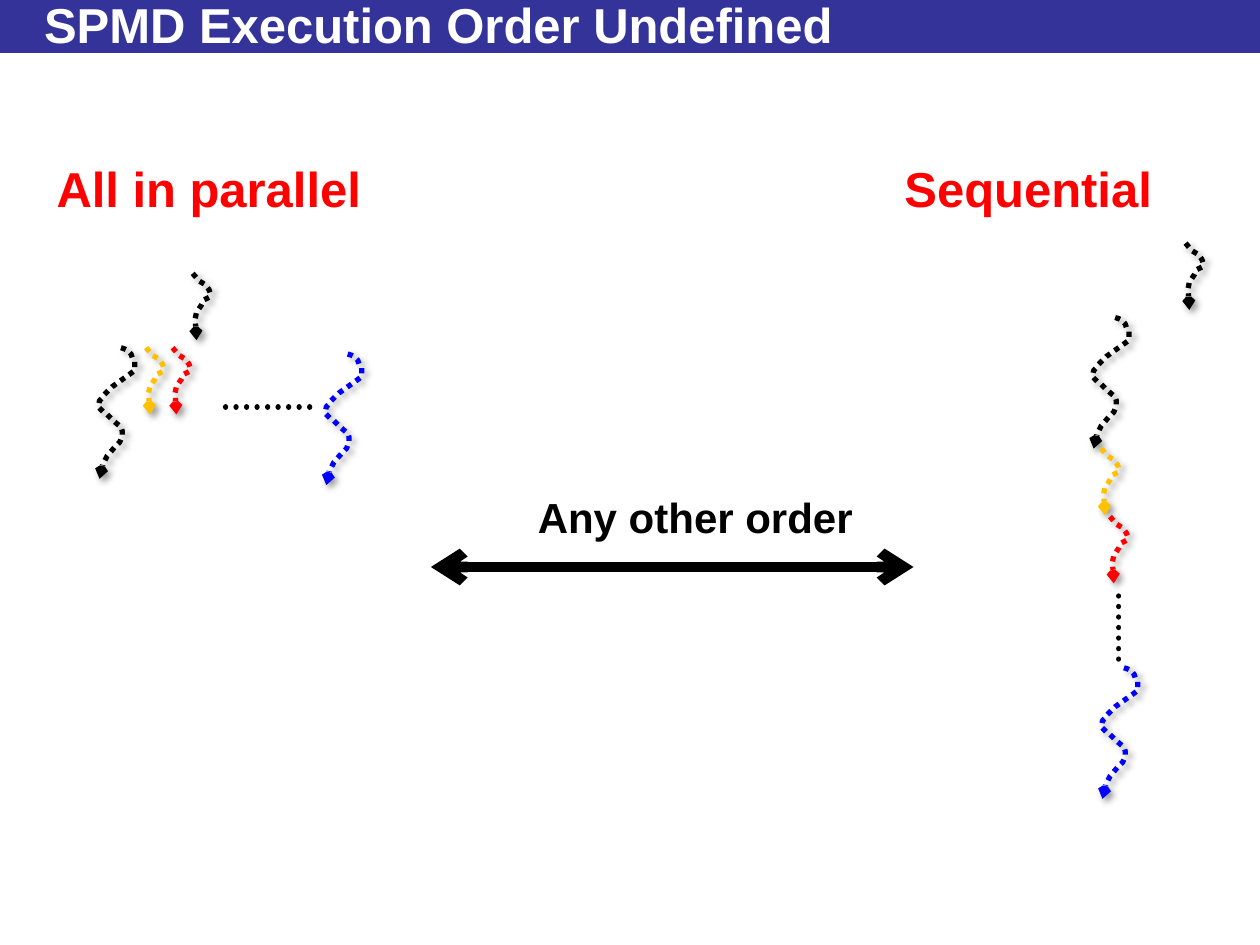
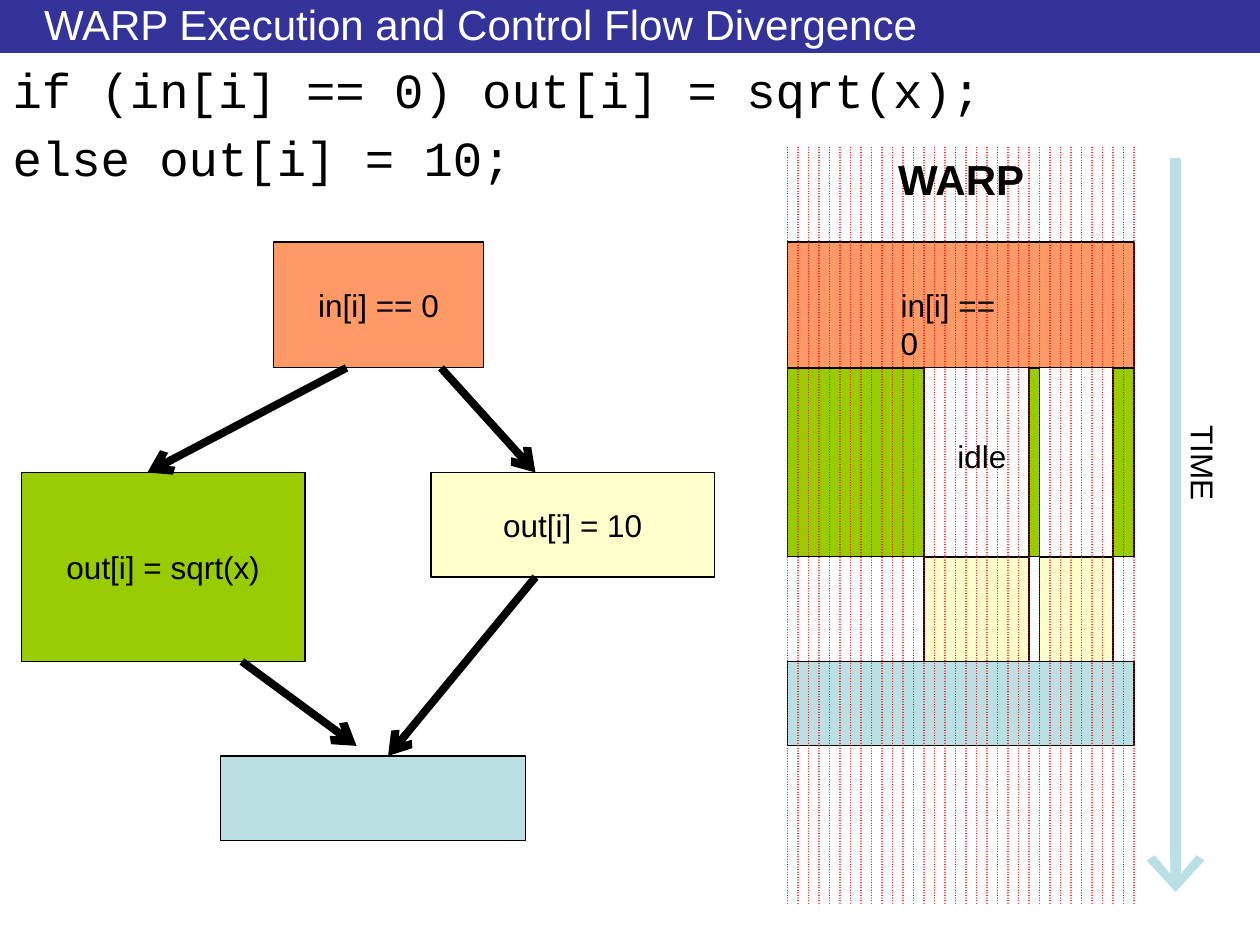
import pptx
import pptx.util
import pptx.dml.color
import pptx.enum.dml
import pptx.enum.shapes
import pptx.enum.text
import pptx.oxml
import pptx.oxml.ns

Inches = pptx.util.Inches
Pt = pptx.util.Pt
RGB = pptx.dml.color.RGBColor.from_string
qn = pptx.oxml.ns.qn
NS = pptx.oxml.ns.nsdecls("a")
RECT = pptx.enum.shapes.MSO_SHAPE.RECTANGLE
STRAIGHT = pptx.enum.shapes.MSO_CONNECTOR.STRAIGHT
DOTS = pptx.enum.dml.MSO_LINE.ROUND_DOT
ALIGN = pptx.enum.text.PP_ALIGN
MIDDLE = pptx.enum.text.MSO_ANCHOR.MIDDLE
FIT = pptx.enum.text.MSO_AUTO_SIZE

C = {"band": "333399", "white": "FFFFFF", "black": "000000", "red": "FF0000",
     "gold": "FFC000", "blue": "0000FF", "test": "FF9966", "sqrt": "99CC00",
     "ten": "FFFFCC", "join": "BBE0E3"}


def write(tf, text, size=18, color="black", bold=False, font="Arial",
          align=ALIGN.LEFT, wrap=False, fit=FIT.SHAPE_TO_FIT_TEXT):
    tf.word_wrap = wrap
    tf.auto_size = fit
    for i, line in enumerate(text.split("\n")):
        p = tf.paragraphs[0] if i == 0 else tf.add_paragraph()
        p.alignment = align
        r = p.add_run()
        r.text = line
        r.font.size, r.font.bold, r.font.name = Pt(size), bold, font
        r.font.color.rgb = RGB(C[color])


def outline(sp, color="black", width=0.75, dash=None, ends=(), head=("med", "med"),
            cap=None, shadow=False):
    """Set the line, its arrowheads and the shadow of a shape or connector."""
    sp.line.color.rgb = RGB(C[color])
    sp.line.width = Pt(width)
    if dash:
        sp.line.dash_style = dash
    spPr = sp.element.spPr
    ln = spPr.find(qn("a:ln"))
    if cap:
        ln.set("cap", cap)
    for end in ends:
        ln.append(pptx.oxml.parse_xml(
            f'<a:{end} {NS} type="arrow" w="{head[0]}" len="{head[1]}"/>'))
    effect = ('<a:outerShdw blurRad="50800" dist="38100" dir="2700000" algn="tl" rotWithShape="0">'
              '<a:srgbClr val="000000"><a:alpha val="40000"/></a:srgbClr></a:outerShdw>'
              if shadow else "")
    spPr.append(pptx.oxml.parse_xml(f'<a:effectLst {NS}>{effect}</a:effectLst>'))


prs = pptx.Presentation()
prs.slide_width, prs.slide_height = Inches(10), Inches(7.5)

# Slides with their titles
slides = []
for layout, title, size, bold in [
        (5, "SPMD Execution Order Undefined", 28, True),
        (1, "WARP Execution and Control Flow Divergence", 24, False)]:
    s = prs.slides.add_slide(prs.slide_layouts[layout])
    sp = s.shapes.title
    sp.left, sp.top, sp.width, sp.height = Inches(0.25), Inches(0.05), Inches(9.25), Inches(0.28)
    sp.text_frame.vertical_anchor = MIDDLE
    write(sp.text_frame, title, size=size, color="white", bold=bold, wrap=True, fit=FIT.NONE)
    slides.append(s)
order, warp = slides

# Title band, moved to the master so that both slides share it
band = order.shapes.add_shape(RECT, 0, 0, Inches(10), Inches(0.42))
band.fill.solid()
band.fill.fore_color.rgb = RGB(C["band"])
band.line.fill.background()
band.shadow.inherit = False
prs.slide_master.shapes.element.insert(2, band.element)

# Slide 1: thread strands, outlined in hundredths of an inch
LONG = [(18, 0), (21, 1), (23, 2), (26, 5), (27, 8), (29, 11), (29, 18), (25, 21),
        (11, 31), (4, 38), (3, 40), (1, 42), (0, 47), (4, 51), (7, 53), (12, 58),
        (18, 63), (19, 66), (19, 70), (17, 75), (13, 79), (7, 86), (5, 90), (4, 91), (1, 104)]
SHORT = [(0, 0), (5, 6), (10, 9), (13, 13), (14, 16), (13, 19), (9, 21), (7, 25),
         (3, 31), (2, 36), (3, 53)]

schedules = [
    ("All in parallel", 0.35, 2.65, (1.79, 3.23, 2.49, 3.23),
     [(LONG, 0.78, 2.76, "black"), (SHORT, 1.53, 2.17, "black"), (SHORT, 1.16, 2.76, "gold"),
      (SHORT, 1.37, 2.76, "red"), (LONG, 2.58, 2.81, "blue")]),
    ("Sequential", 7.08, 2.19, (8.88, 4.73, 8.88, 5.3),
     [(LONG, 8.67, 2.52, "black"), (SHORT, 9.41, 1.93, "black"), (SHORT, 8.74, 3.56, "gold"),
      (SHORT, 8.81, 4.1, "red"), (LONG, 8.74, 5.3, "blue")]),
]
for heading, left, width, dots, strands in schedules:
    group = order.shapes.add_group_shape().shapes
    for points, x, y, color in strands:
        builder = group.build_freeform(*points[0], scale=Inches(0.01))
        builder.add_line_segments(points[1:], close=False)
        sp = builder.convert_to_shape(Inches(x), Inches(y))
        sp.fill.background()
        outline(sp, color, 3, DOTS, ends=["tailEnd"], head=("sm", "sm"), shadow=True)
    cx = group.add_connector(STRAIGHT, *map(Inches, dots))
    outline(cx, width=3, dash=DOTS, cap="rnd")
    sp = order.shapes.add_textbox(Inches(left), Inches(1.21), Inches(width), Inches(0.57))
    write(sp.text_frame, heading, size=28, color="red", bold=True)

# Range between the two schedules
cx = order.shapes.add_connector(STRAIGHT, Inches(3.42), Inches(4.5), Inches(7.25), Inches(4.5))
outline(cx, width=6, ends=["headEnd", "tailEnd"])
sp = order.shapes.add_textbox(Inches(4.17), Inches(3.85), Inches(2.73), Inches(0.5))
write(sp.text_frame, "Any other order", size=24, bold=True)

# Slide 2: code
body = warp.placeholders[1]
body.left, body.top, body.width, body.height = 0, Inches(0.42), Inches(10), Inches(7.08)
write(body.text_frame, "if (in[i] == 0) out[i] = sqrt(x);\nelse out[i] = 10;",
      size=28, font="Courier New", wrap=True, fit=FIT.NONE)
for p in body.text_frame.paragraphs:
    p._p.get_or_add_pPr().append(pptx.oxml.parse_xml(f'<a:buNone {NS}/>'))

# Flow chart boxes, then the warp's boxes measured in lanes
LANES, LANE, WARP_LEFT = 33, 1 / 12, 6.25
boxes = [
    (2.17, 1.92, 1.67, 1, "test", "in[i] == 0"),
    (0.17, 3.75, 2.25, 1.5, "sqrt", "out[i] = sqrt(x)"),
    (3.42, 3.75, 2.25, 0.83, "ten", "out[i] = 10"),
    (1.75, 6, 2.42, 0.67, "join", ""),
]
phases = {"test": (1.92, 1), "sqrt": (2.92, 1.5), "ten": (4.42, 0.83), "join": (5.25, 0.67)}
for first, last, phase in [(0, LANES, "test"), (0, 13, "sqrt"), (13, 23, "ten"),
                           (23, 24, "sqrt"), (24, 31, "ten"), (31, LANES, "sqrt"),
                           (0, LANES, "join")]:
    top, height = phases[phase]
    boxes.append((WARP_LEFT + first * LANE, top, (last - first) * LANE, height, phase, ""))
for left, top, width, height, color, text in boxes:
    sp = warp.shapes.add_shape(RECT, Inches(left), Inches(top), Inches(width), Inches(height))
    sp.fill.solid()
    sp.fill.fore_color.rgb = RGB(C[color])
    outline(sp)
    if text:
        sp.text_frame.vertical_anchor = MIDDLE
        write(sp.text_frame, text, align=ALIGN.CENTER, fit=FIT.NONE)

# Flow arrows
for ends in [(2.75, 2.92, 1.17, 3.75), (3.5, 2.92, 4.25, 3.75),
             (1.92, 5.25, 2.83, 5.92), (4.25, 4.58, 3.08, 6)]:
    cx = warp.shapes.add_connector(STRAIGHT, *map(Inches, ends))
    outline(cx, width=4.5, ends=["tailEnd"])

# Lane borders
for i in range(LANES + 1):
    x = Inches(WARP_LEFT + i * LANE)
    cx = warp.shapes.add_connector(STRAIGHT, x, Inches(1.17), x, Inches(7.17))
    outline(cx, "red", dash=DOTS, cap="rnd")

# Time axis
cx = warp.shapes.add_connector(STRAIGHT, Inches(9.33), Inches(1.25), Inches(9.33), Inches(7.08))
outline(cx, "join", 6, ends=["tailEnd"], head=("lg", "med"))

# Labels, in front of the lane borders
for text, left, top, width, height, size, bold, turn in [
        ("in[i] == 0", 7.05, 2.22, 1.15, 0.4, 18, False, 0),
        ("idle", 7.5, 3.42, 0.59, 0.4, 18, False, 0),
        ("WARP", 7.03, 1.17, 1.22, 0.5, 24, True, 0),
        ("TIME", 9.15, 3.48, 0.8, 0.4, 18, False, 90)]:
    sp = warp.shapes.add_textbox(Inches(left), Inches(top), Inches(width), Inches(height))
    sp.rotation = turn
    write(sp.text_frame, text, size=size, bold=bold)

prs.save("out.pptx")
